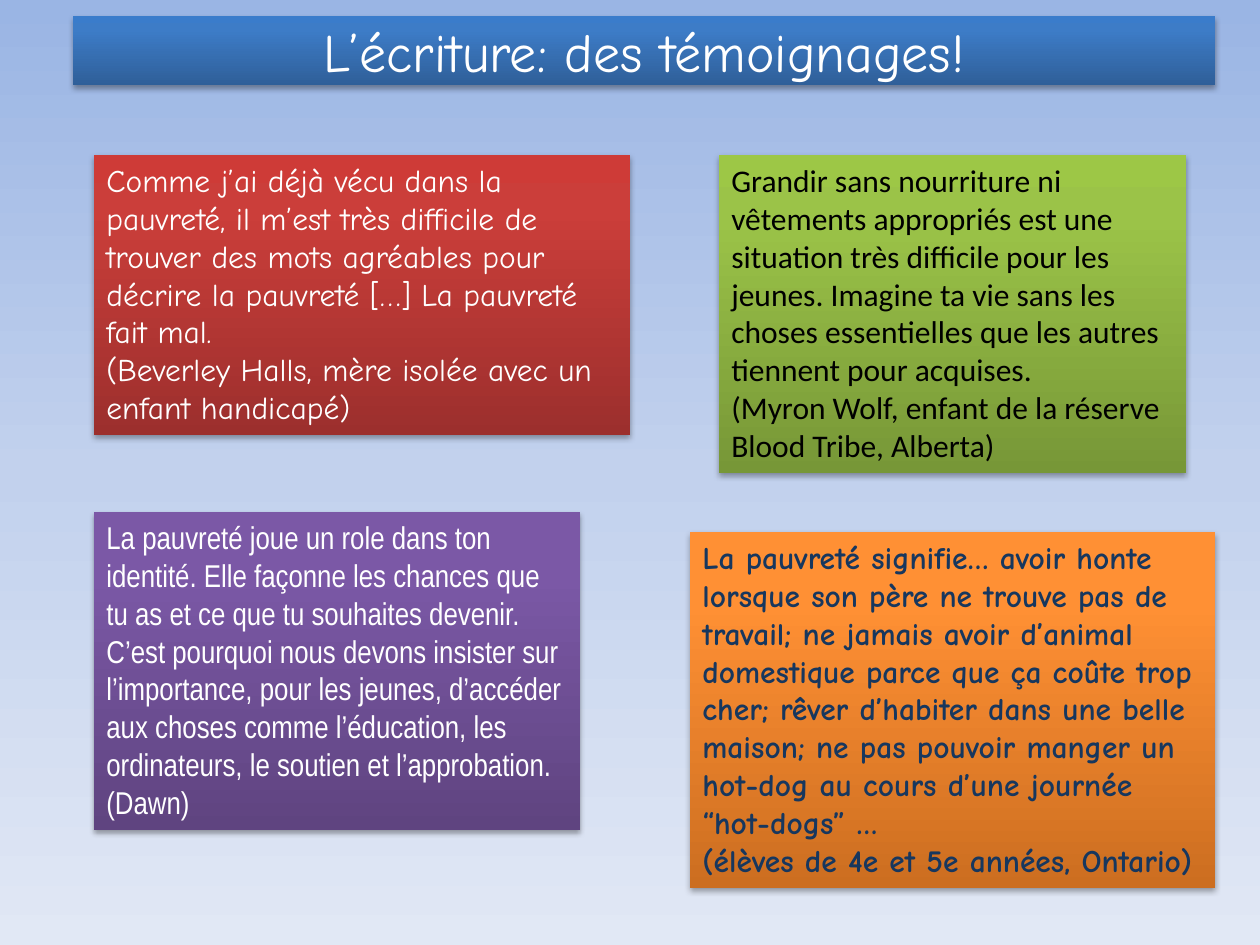
from lxml.etree import SubElement
from pptx import Presentation
from pptx.dml.color import RGBColor
from pptx.enum.shapes import MSO_SHAPE
from pptx.enum.text import MSO_ANCHOR as ANCHOR, MSO_AUTO_SIZE as AUTO, PP_ALIGN as ALIGN
from pptx.oxml.ns import qn
from pptx.util import Emu, Pt

SCALE = 914400 / 126

QUOTES = [
    ((94, 155, 536, 280), ("9C2F2D", "CB3E3A", "CE3B37"),
     dict(font="Comic Neue", color="FFFFFF"),
     ["Comme j’ai déjà vécu dans la pauvreté, il m’est très difficile de trouver "
      "des mots agréables pour décrire la pauvreté […] La pauvreté fait mal.",
      "(Beverley Halls, mère isolée avec un enfant handicapé)"]),
    ((719, 155, 467, 318), ("779737", "9BC348", "9DC746"),
     dict(font="Calibri", color="000000"),
     ["Grandir sans nourriture ni vêtements appropriés est une situation très "
      "difficile pour les jeunes. Imagine ta vie sans les choses essentielles "
      "que les autres tiennent pour acquises.",
      "(Myron Wolf, enfant de la réserve Blood Tribe, Alberta)"]),
    ((94, 512, 486, 318), ("5F4480", "7B58A6", "7C57A8"),
     dict(font="Arial Narrow", color="FFFFFF"),
     ["La pauvreté joue un role dans ton identité. Elle façonne les chances que "
      "tu as et ce que tu souhaites devenir. C’est pourquoi nous devons insister "
      "sur l’importance, pour les jeunes, d’accéder aux choses comme l’éducation, "
      "les ordinateurs, le soutien et l’approbation.",
      "(Dawn)"]),
    ((690, 532, 525, 356), ("CC6E20", "FF9034", "FF9136"),
     dict(font="Comic Neue", color="17375E", bold=True),
     ["La pauvreté signifie… avoir honte lorsque son père ne trouve pas de "
      "travail; ne jamais avoir d’animal domestique parce que ça coûte trop cher; "
      "rêver d’habiter dans une belle maison; ne pas pouvoir manger un hot-dog "
      "au cours d’une journée “hot-dogs” …",
      "(élèves de 4e et 5e années, Ontario)"]),
]


def px(n):
    """Turn pixels into EMU."""
    return Emu(round(n * SCALE))


def rgb(value):
    """Turn a hex string into a colour."""
    return RGBColor.from_string(value)


def set_gradient(fill, parent, colors, middle, angle):
    """Give the parent element a three-stop linear gradient."""
    fill.solid()
    solid = parent.find(qn("a:solidFill"))
    grad = parent.makeelement(qn("a:gradFill"), {"rotWithShape": "1"})
    stops = SubElement(grad, qn("a:gsLst"))
    for pos, color in zip((0, middle, 100), colors):
        gs = SubElement(stops, qn("a:gs"), pos=str(pos * 1000))
        SubElement(gs, qn("a:srgbClr"), val=color)
    SubElement(grad, qn("a:lin"), ang=str(angle * 60000), scaled="0")
    parent.replace(solid, grad)


def set_shadow(sp):
    """Add a soft shadow below the shape."""
    sp.shadow.inherit = False
    effects = sp.element.spPr.find(qn("a:effectLst"))
    shadow = SubElement(effects, qn("a:outerShdw"), blurRad="40000", dist="23000",
                        dir="5400000", rotWithShape="0")
    color = SubElement(shadow, qn("a:srgbClr"), val="000000")
    SubElement(color, qn("a:alpha"), val="35000")


def write(p, text, font, color, size=18, bold=False, align=ALIGN.LEFT):
    """Write one formatted run into a paragraph."""
    p.alignment = align
    r = p.add_run()
    r.text = text
    r.font.name, r.font.size, r.font.bold = font, Pt(size), bold
    r.font.color.rgb = rgb(color)


def add_panel(slide, box, colors):
    """Draw a shaded rectangle and return its text frame."""
    sp = slide.shapes.add_shape(MSO_SHAPE.RECTANGLE, *map(px, box))
    set_gradient(sp.fill, sp.element.spPr, colors, 80, 270)
    sp.line.fill.background()
    set_shadow(sp)
    sp.text_frame.word_wrap = True
    return sp.text_frame


def add_title(slide, box, text):
    """Draw the title bar."""
    tf = add_panel(slide, box, ("2F5F99", "3D7CC7", "3A7CCB"))
    tf.vertical_anchor = ANCHOR.MIDDLE
    write(tf.paragraphs[0], text, font="Comic Neue", color="FFFFFF",
          size=30.8, align=ALIGN.CENTER)


def add_quote(slide, box, colors, style, lines):
    """Draw a testimony followed by its author."""
    tf = add_panel(slide, box, colors)
    tf.vertical_anchor = ANCHOR.TOP
    tf.auto_size = AUTO.SHAPE_TO_FIT_TEXT
    for i, line in enumerate(lines):
        p = tf.add_paragraph() if i else tf.paragraphs[0]
        write(p, line, **style)


def main():
    """Build the slide and save it."""
    prs = Presentation()
    prs.slide_width, prs.slide_height = px(1260), px(945)
    slide = prs.slides.add_slide(prs.slide_layouts[6])
    fill = slide.background.fill
    fill.solid()
    set_gradient(fill, slide.element.find(".//" + qn("p:bgPr")),
                 ("9AB5E4", "C2D1ED", "E1E8F5"), 50, 90)
    add_title(slide, (73, 16, 1142, 69), "L’écriture: des témoignages!")
    for quote in QUOTES:
        add_quote(slide, *quote)
    prs.save("out.pptx")


if __name__ == "__main__":
    main()
